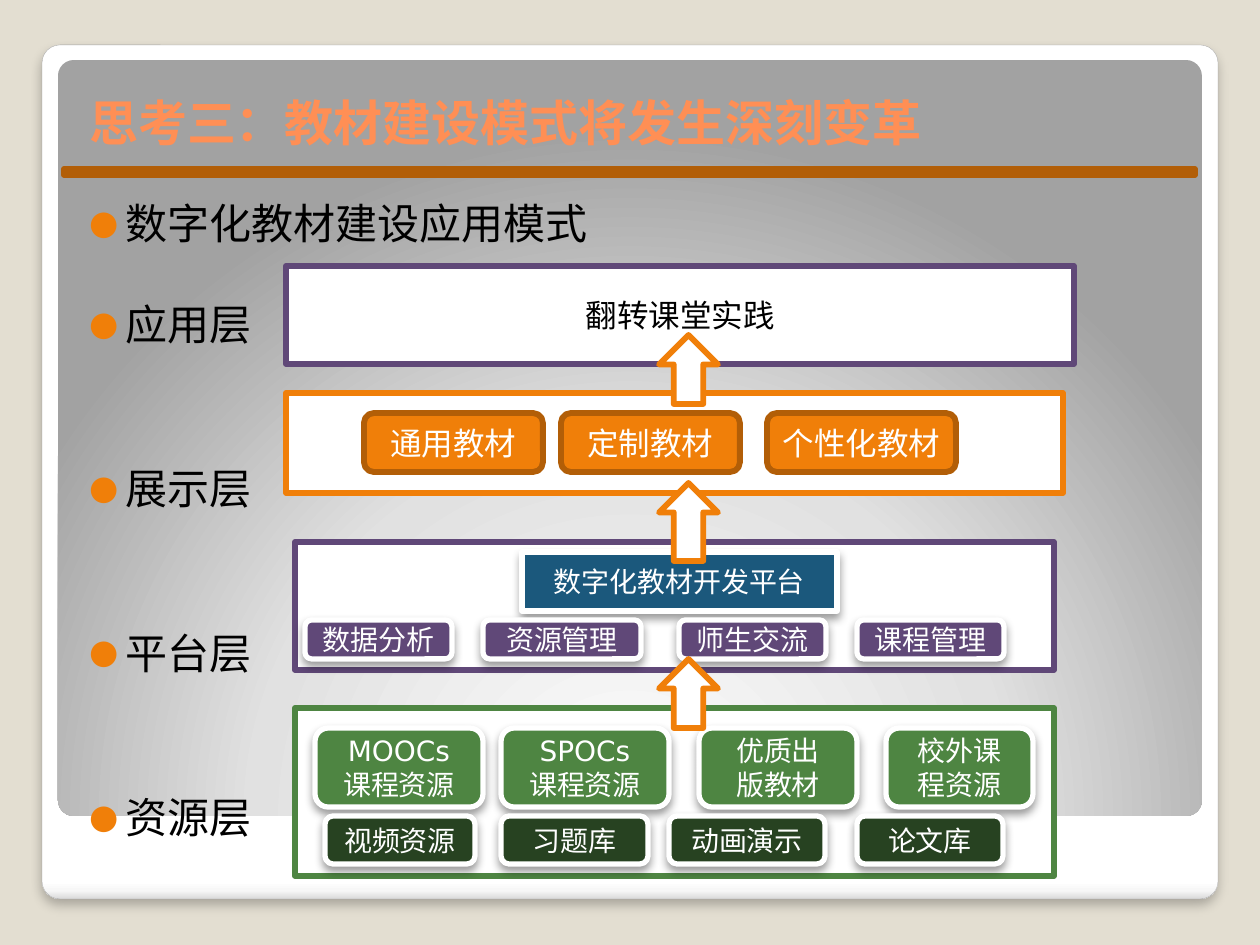
from lxml import etree
from pptx import Presentation, util as u
from pptx.dml.color import RGBColor
from pptx.enum import shapes, text
from pptx.oxml import ns

WHITE = RGBColor(0xFF, 0xFF, 0xFF)
BLACK = RGBColor(0x00, 0x00, 0x00)
SAND = RGBColor(0xE3, 0xDE, 0xD1)
GREY = RGBColor(0xA4, 0xA4, 0xA4)
CORAL = RGBColor(0xFF, 0x8F, 0x55)
ORANGE = RGBColor(0xF0, 0x7F, 0x09)
BROWN = RGBColor(0xB2, 0x5E, 0x07)
PURPLE = RGBColor(0x60, 0x48, 0x78)
GREEN = RGBColor(0x4E, 0x85, 0x42)
DARK_GREEN = RGBColor(0x27, 0x42, 0x21)
BLUE = RGBColor(0x1B, 0x58, 0x7C)

FONT = "DejaVu Sans"
RECT = shapes.MSO_SHAPE.RECTANGLE
ROUND = shapes.MSO_SHAPE.ROUNDED_RECTANGLE
ARROW = shapes.MSO_SHAPE.UP_ARROW
EDGE = 3.35
SOFT_SHADOW = (40, 5.2, 3)
CARD_SHADOW = (25, 6, 4)

HEADING = "思考三：教材建设模式将发生深刻变革"
LAYERS = [("数字化教材建设应用模式", 2.5), ("应用层", 29),
          ("展示层", 65), ("平台层", 65), ("资源层", 65)]

CARD = (42, 45, 1176, 854)
PANEL = (58, 60, 1144, 756)
CARD_STOPS = [(0, "FFFFFF"), (98, "FFFFFF"), (99, "F7F7F7"), (100, "DADADA")]
PANEL_STOPS = [(0, "FFFFFF"), (55, "E1E1E1"), (100, "A2A2A2")]
CARD_SHADE = '<a:lin ang="5400000" scaled="0"/>'
PANEL_SHADE = ('<a:path path="circle"><a:fillToRect l="50000" t="175000" '
               'r="50000" b="-75000"/></a:path>')

HEADING_BOX = (64, 84, 1131, 76)
LAYERS_BOX = (64, 185, 1128, 662)
RULE = (64, 169, 1131, 6)

FRAMES = [
    ((286, 266, 788, 98), PURPLE, ["翻转课堂实践"]),
    ((286, 393, 777, 100), ORANGE, []),
    ((295, 542, 759, 128), PURPLE, []),
    ((295, 708, 759, 168), GREEN, []),
]
PLATFORM = ((522, 552, 315, 59), ["数字化教材开发平台"])
ROWS = [
    dict(top=413, height=59, fill=ORANGE, line=BROWN, width=EDGE, size=18, shadow=None,
         items=[(364, 179, ["通用教材"]), (561, 179, ["定制教材"]),
                (767, 189, ["个性化教材"])]),
    dict(top=620, height=39, fill=PURPLE, line=WHITE, width=3, size=16, shadow=SOFT_SHADOW,
         items=[(305, 147, ["数据分析"]), (483, 158, ["资源管理"]),
                (679, 147, ["师生交流"]), (857, 147, ["课程管理"])]),
    dict(top=728, height=79, fill=GREEN, line=WHITE, width=3, size=16, shadow=SOFT_SHADOW,
         items=[(315, 168, ["MOOCs", "课程资源"]), (501, 168, ["SPOCs", "课程资源"]),
                (699, 158, ["优质出", "版教材"]), (886, 147, ["校外课", "程资源"])]),
    dict(top=816, height=48, fill=DARK_GREEN, line=WHITE, width=3, size=16, shadow=SOFT_SHADOW,
         items=[(325, 150, ["视频资源"]), (501, 147, ["习题库"]),
                (669, 156, ["动画演示"]), (857, 146, ["论文库"])]),
]
ARROWS = [(659, 335, 59, 69), (659, 483, 59, 78), (659, 659, 59, 69)]


def px(n):
    return u.Emu(round(n * 914400 / 126))


def assign(target, values):
    for key, value in values.items():
        setattr(target, key, value)


def add_xml(parent, markup):
    root = etree.fromstring(f'<r {ns.nsdecls("a")}>{markup}</r>')
    for child in list(root):
        parent.append(child)


def write(frame, lines, size, color, align, bold=False):
    for i, line in enumerate(lines):
        para = frame.paragraphs[0] if i == 0 else frame.add_paragraph()
        para.alignment = align
        run = para.add_run()
        run.text = line
        assign(run.font, dict(name=FONT, size=u.Pt(size), bold=bold))
        run.font.color.rgb = color


def add_box(kind, box, fill, line, width=EDGE, shadow=None, lines=(), size=16, color=WHITE):
    shape = slide.shapes.add_shape(kind, *map(px, box))
    shape.fill.solid()
    shape.fill.fore_color.rgb = fill
    if line is None:
        shape.line.fill.background()
    else:
        shape.line.color.rgb = line
        shape.line.width = u.Pt(width)
    shape.shadow.inherit = False
    if shadow:
        alpha, blur, dist = shadow
        add_xml(shape.element.spPr.find(ns.qn("a:effectLst")),
                f'<a:outerShdw blurRad="{u.Pt(blur)}" dist="{u.Pt(dist)}" dir="5400000" '
                f'rotWithShape="0"><a:srgbClr val="000000"><a:alpha val="{alpha * 1000}"/>'
                '</a:srgbClr></a:outerShdw>')
    assign(shape.text_frame, dict(
        margin_left=0, margin_right=0, margin_top=0, margin_bottom=0,
        word_wrap=True, vertical_anchor=text.MSO_ANCHOR.MIDDLE))
    write(shape.text_frame, lines, size, color, text.PP_ALIGN.CENTER)
    return shape


def shade(shape, stops, direction):
    shape.adjustments[0] = 0.021
    shape.fill.gradient()
    grad = shape.element.spPr.find(ns.qn("a:gradFill"))
    for child in list(grad):
        grad.remove(child)
    marks = "".join(f'<a:gs pos="{pos * 1000}"><a:srgbClr val="{rgb}"/></a:gs>'
                    for pos, rgb in stops)
    add_xml(grad, f"<a:gsLst>{marks}</a:gsLst>{direction}")


def place(holder, box, anchor, top):
    left, y, width, height = map(px, box)
    assign(holder, dict(left=left, top=y, width=width, height=height))
    assign(holder.text_frame, dict(
        margin_left=u.Inches(0.2), margin_right=u.Inches(0.1),
        margin_top=u.Inches(top), margin_bottom=u.Inches(0.05),
        word_wrap=True, auto_size=text.MSO_AUTO_SIZE.NONE, vertical_anchor=anchor))
    holder.element.getparent().append(holder.element)


prs = Presentation()
assign(prs, dict(slide_width=u.Inches(10), slide_height=u.Inches(7.5)))
slide = prs.slides.add_slide(prs.slide_layouts[1])
slide.background.fill.solid()
slide.background.fill.fore_color.rgb = SAND

shade(add_box(ROUND, CARD, WHITE, GREY, 0.16, CARD_SHADOW), CARD_STOPS, CARD_SHADE)
shade(add_box(ROUND, PANEL, WHITE, None), PANEL_STOPS, PANEL_SHADE)

heading, layers = slide.placeholders
place(heading, HEADING_BOX, text.MSO_ANCHOR.MIDDLE, 0.05)
write(heading.text_frame, [HEADING], 28, CORAL, text.PP_ALIGN.LEFT, bold=True)
place(layers, LAYERS_BOX, text.MSO_ANCHOR.TOP, 0.1)
write(layers.text_frame, [name for name, _ in LAYERS], 24, BLACK, text.PP_ALIGN.LEFT)
for para, (_, gap) in zip(layers.text_frame.paragraphs, LAYERS):
    para.space_before = u.Pt(gap)
    props = para._p.get_or_add_pPr()
    props.set("marL", str(u.Inches(0.29)))
    props.set("indent", str(-u.Inches(0.29)))
    add_xml(props, f'<a:buClr><a:srgbClr val="{ORANGE}"/></a:buClr><a:buSzPct val="80000"/>'
                   f'<a:buFont typeface="{FONT}"/><a:buChar char="●"/>')

add_box(RECT, RULE, ORANGE, BROWN)
for box, line, lines in FRAMES:
    add_box(RECT, box, WHITE, line, lines=lines, size=18, color=BLACK)
add_box(RECT, PLATFORM[0], BLUE, WHITE, 3, SOFT_SHADOW, PLATFORM[1])
for row in ROWS:
    for left, width, lines in row["items"]:
        add_box(ROUND, (left, row["top"], width, row["height"]), row["fill"], row["line"],
                row["width"], row["shadow"], lines, row["size"])
for box in ARROWS:
    add_box(ARROW, box, WHITE, ORANGE)

prs.save("out.pptx")
